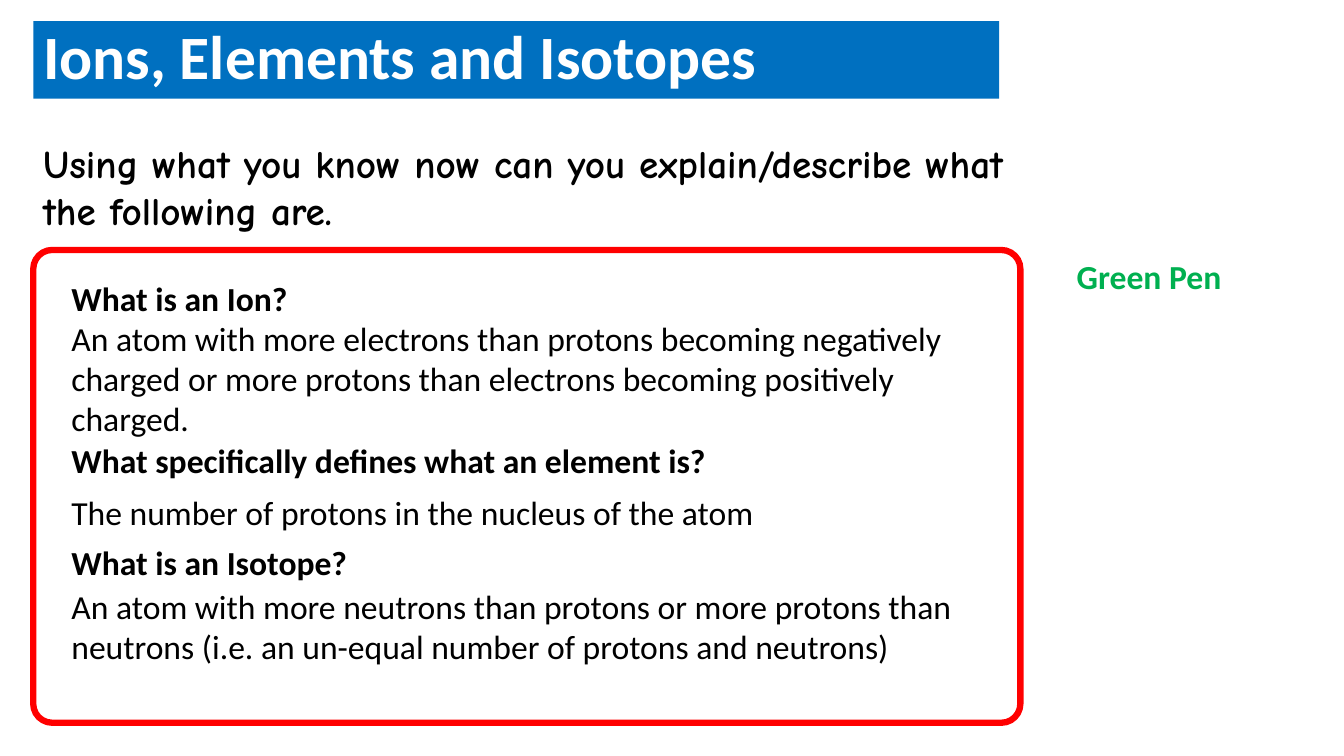
from pptx import Presentation
from pptx.dml.color import RGBColor
from pptx.enum.shapes import MSO_SHAPE as Shape
from pptx.enum.text import MSO_ANCHOR as Anchor, PP_ALIGN as Align
from pptx.util import Inches, Pt


def color(value):
    return RGBColor.from_string(value)


def write(shape, text, size=24, font="Calibri", fill="000000", bold=False,
          anchor=Anchor.TOP, spacing=1.0, wrap=True):
    frame = shape.text_frame
    frame.word_wrap = wrap
    frame.vertical_anchor = anchor
    paragraph = frame.paragraphs[0]
    paragraph.alignment = Align.LEFT
    paragraph.line_spacing = spacing
    run = paragraph.add_run()
    run.text = text
    run.font.size = Pt(size)
    run.font.name = font
    run.font.bold = bold
    run.font.color.rgb = color(fill)


class SlideBuilder:
    """Adds styled boxes and text to one slide."""

    def __init__(self, slide):
        self.shapes = slide.shapes

    def box(self, left, top, width, height, kind=Shape.RECTANGLE,
            fill=None, line=None, radius=None):
        shape = self.shapes.add_shape(
            kind, Inches(left), Inches(top), Inches(width), Inches(height))
        shape.shadow.inherit = False
        if fill:
            shape.fill.solid()
            shape.fill.fore_color.rgb = color(fill)
        else:
            shape.fill.background()
        if line:
            shape.line.color.rgb = color(line)
            shape.line.width = Pt(4.5)
        else:
            shape.line.fill.background()
        if radius is not None:
            shape.adjustments[0] = radius
        return shape

    def label(self, left, top, width, height, text, **style):
        shape = self.shapes.add_textbox(
            Inches(left), Inches(top), Inches(width), Inches(height))
        write(shape, text, **style)


QUESTIONS = [
    (2.71, 9.79, "What is an Ion?", True),
    (4.32, 6.56, "What specifically defines what an element is?", False),
    (5.33, 2.97, "What is an Isotope?", False),
]
ANSWERS = [
    (3.1, 9.07, 1.31, "An atom with more electrons than protons becoming "
     "negatively charged or more protons than electrons becoming positively "
     "charged.", True),
    (4.83, 7.03, 0.5, "The number of protons in the nucleus of the atom", False),
    (5.76, 9.22, 0.91, "An atom with more neutrons than protons or more protons "
     "than neutrons (i.e. an un-equal number of protons and neutrons)", True),
]


def main():
    presentation = Presentation()
    presentation.slide_width = Inches(13.33)
    presentation.slide_height = Inches(7.5)
    slide = presentation.slides.add_slide(presentation.slide_layouts[6])
    builder = SlideBuilder(slide)

    title = builder.box(0.33, 0.21, 9.58, 0.77, fill="0070C0")
    write(title, "Ions, Elements and Isotopes", size=44, fill="FFFFFF",
          bold=True, anchor=Anchor.MIDDLE, spacing=0.9)
    task = builder.box(0.33, 1.33, 10.34, 1.04, fill="FFFFFF", line="FFFFFF")
    write(task, "Using what you know now can you explain/describe what the "
          "following are.", size=28, font="Comic Neue", bold=True)

    for top, width, text, wrap in QUESTIONS:
        builder.label(0.61, top, width, 0.5, text, bold=True, wrap=wrap)
    for top, width, height, text, wrap in ANSWERS:
        builder.label(0.61, top, width, height, text, wrap=wrap)

    builder.box(0.33, 2.48, 9.79, 4.69, kind=Shape.ROUNDED_RECTANGLE,
                line="FF0000", radius=0.04)
    builder.label(10.58, 2.49, 1.65, 0.5, "Green Pen", fill="00B050",
                  bold=True, wrap=False)
    presentation.save("out.pptx")


if __name__ == "__main__":
    main()
